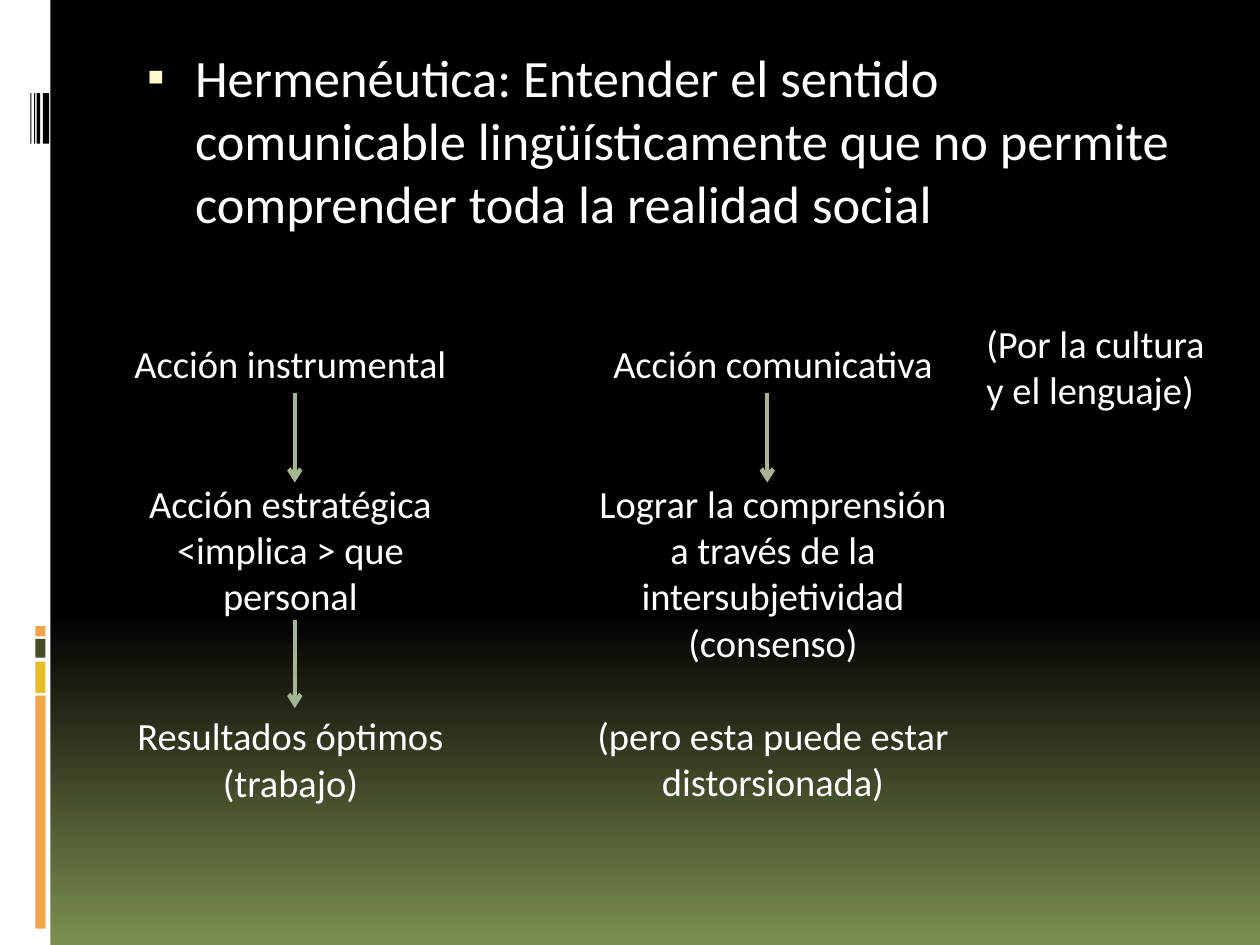
from lxml import etree
from pptx import Presentation
from pptx.dml.color import RGBColor
from pptx.enum import shapes, text
from pptx.oxml.ns import qn
from pptx.util import Inches, Pt

WHITE = RGBColor(0xFF, 0xFF, 0xFF)
BLACK = RGBColor(0x00, 0x00, 0x00)
OLIVE = RGBColor(0x7D, 0x8F, 0x50)
ORANGE = RGBColor(0xF3, 0xA4, 0x47)
YELLOW = RGBColor(0xE7, 0xBC, 0x29)
DARK_GREEN = RGBColor(0x44, 0x4D, 0x26)
SAGE = RGBColor(0xA5, 0xB5, 0x92)

prs = Presentation()
prs.slide_width, prs.slide_height = Inches(10), Inches(7.5)
slide = prs.slides.add_slide(prs.slide_layouts[6])

# Background: black down to 65 %, then fading to olive
backdrop = slide.background.fill
backdrop.gradient()
backdrop.gradient_angle = 270
for stop, (position, color) in zip(backdrop.gradient_stops, [(0.65, BLACK), (1, OLIVE)]):
    stop.position = position
    stop.color.rgb = color

# Left margin: white strip, coloured blocks and barcode
margin_bars = [(0, 0, 0.4, 7.5, WHITE)]
margin_bars += [(0.28, top, 0.08, height, color) for top, height, color in [
    (5.52, 1.85, ORANGE), (5.25, 0.25, YELLOW), (5.07, 0.15, DARK_GREEN), (4.97, 0.08, ORANGE)]]
margin_bars += [(left, 0.74, width, 0.4, BLACK) for left, width in [
    (0.34, 0.05), (0.29, 0.03), (0.27, 0.01), (0.24, 0.01)]]
for left, top, width, height, color in margin_bars:
    bar = slide.shapes.add_shape(shapes.MSO_SHAPE.RECTANGLE, Inches(left), Inches(top),
                                 Inches(width), Inches(height))
    bar.shadow.inherit = False
    bar.fill.solid()
    bar.fill.fore_color.rgb = color
    bar.line.fill.background()


def add_text(left, top, width, height, entries, size=22, align=text.PP_ALIGN.CENTER):
    """Add a text box from (space before in points, wording) pairs; return its paragraphs."""
    box = slide.shapes.add_textbox(Inches(left), Inches(top), Inches(width), Inches(height))
    frame = box.text_frame
    frame.word_wrap = True
    for index, (gap, wording) in enumerate(entries):
        paragraph = frame.add_paragraph() if index else frame.paragraphs[0]
        paragraph.alignment = align
        paragraph.space_before = Pt(gap)
        run = paragraph.add_run()
        run.text = wording
        run.font.name = "Calibri"
        run.font.size = Pt(size)
        run.font.color.rgb = WHITE
    return frame.paragraphs


# Bulleted statement
statement = add_text(1, 0.31, 8.5, 1.72, [
    (7, "Hermenéutica: Entender el sentido comunicable lingüísticamente que no permite "
        "comprender toda la realidad social")], size=30, align=text.PP_ALIGN.LEFT)[0]
properties = statement._p.get_or_add_pPr()
properties.set("marL", str(Inches(0.45)))
properties.set("indent", str(Inches(-0.38)))
bullet_color = etree.SubElement(properties, qn("a:buClr"))
etree.SubElement(bullet_color, qn("a:srgbClr"), val="FEFAC9")
etree.SubElement(properties, qn("a:buSzPct"), val="95000")
etree.SubElement(properties, qn("a:buFont"), typeface="Calibri")
etree.SubElement(properties, qn("a:buChar"), char="▪")

# Two columns of actions, spaced by whole lines of 22 pt text
LINE = 26.8
add_text(0.78, 2.65, 3.05, 3.8, [
    (0, "Acción instrumental"),
    (2 * LINE, "Acción estratégica <implica > que personal"),
    (2 * LINE, "Resultados óptimos (trabajo)")])
add_text(4.61, 2.65, 3.05, 3.8, [
    (0, "Acción comunicativa"),
    (2 * LINE, "Lograr la comprensión a través de la intersubjetividad (consenso)"),
    (LINE, "(pero esta puede estar distorsionada)")])
add_text(7.73, 2.49, 1.95, 0.84, [(0, "(Por la cultura y el lenguaje)")],
         align=text.PP_ALIGN.LEFT)

# Arrows between the steps
for x, start, end in [(2.34, 3.12, 3.83), (2.34, 4.92, 5.62), (6.09, 3.12, 3.83)]:
    arrow = slide.shapes.add_connector(shapes.MSO_CONNECTOR.STRAIGHT, Inches(x), Inches(start),
                                       Inches(x), Inches(end))
    arrow.line.color.rgb = SAGE
    arrow.line.width = Pt(2.5)
    etree.SubElement(arrow.line._get_or_add_ln(), qn("a:tailEnd"), type="arrow")
    etree.SubElement(arrow._element.spPr, qn("a:effectLst"))

prs.save("out.pptx")
